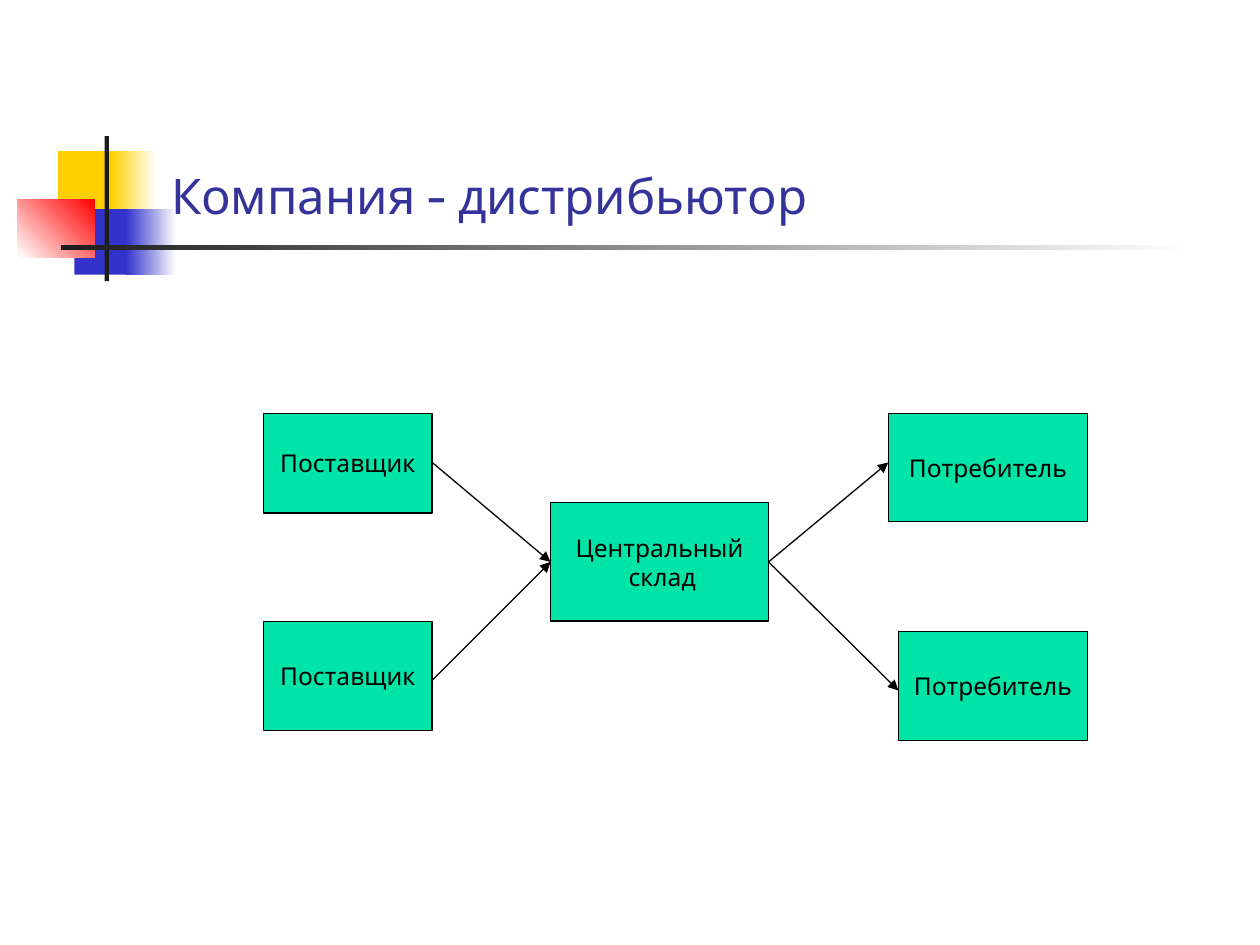
from lxml import etree
from pptx import Presentation
from pptx.dml.color import RGBColor
from pptx.enum import shapes, text
from pptx.oxml import ns
from pptx.util import Pt

WHITE = RGBColor(0xFF, 0xFF, 0xFF)
BLACK = RGBColor(0, 0, 0)
CHARCOAL = RGBColor(0x1C, 0x1C, 0x1C)
YELLOW = RGBColor(0xFF, 0xCF, 0x01)
BLUE = RGBColor(0x33, 0x33, 0xCC)
RED = RGBColor(0xFF, 0, 0)
NAVY = RGBColor(0x33, 0x33, 0x99)
GREEN = RGBColor(0x00, 0xE4, 0xA8)
FONT = "Cabin"


def add_rectangle(page, left, top, width, height):
    shape = page.shapes.add_shape(
        shapes.MSO_SHAPE.RECTANGLE, Pt(left), Pt(top), Pt(width), Pt(height))
    shape.shadow.inherit = False
    return shape


def paint(shape, colors, angle=0):
    if len(colors) == 1:
        shape.fill.solid()
        shape.fill.fore_color.rgb = colors[0]
        return
    shape.fill.gradient()
    shape.fill.gradient_angle = angle
    for stop, color in zip(shape.fill.gradient_stops, colors):
        stop.color.rgb = color


def write(shape, lines, size, color, alignment, frame_format):
    frame = shape.text_frame
    for name, value in frame_format.items():
        setattr(frame, name, value)
    for number, line in enumerate(lines):
        para = frame.add_paragraph() if number else frame.paragraphs[0]
        para.alignment = alignment
        span = para.add_run()
        span.text = line
        for name, value in {"name": FONT, "size": Pt(size)}.items():
            setattr(span.font, name, value)
        span.font.color.rgb = color


def add_ornament(page, left, top):
    parts = [
        (23, 8.6, 34.6, 37.4, [YELLOW], 0),
        (53.3, 8.6, 25.9, 37.4, [YELLOW, WHITE], 0),
        (32.4, 41.7, 33.1, 37.4, [BLUE], 0),
        (61.9, 41.7, 28.8, 37.4, [BLUE, WHITE], 0),
        (0, 36, 43.9, 33.1, [WHITE, RED], 45),
        (49.7, 0, 2.5, 82.8, [CHARCOAL], 0),
        (24.5, 62.4, 648, 2.5, [CHARCOAL, WHITE], 0),
    ]
    for x, y, width, height, colors, angle in parts:
        shape = add_rectangle(page, left + x, top + y, width, height)
        paint(shape, colors, angle)
        shape.line.fill.background()


def add_title(page, left, top, width, height):
    box = page.shapes.add_textbox(Pt(left), Pt(top), Pt(width), Pt(height))
    write(box, ["Компания - дистрибьютор"], 28, NAVY, text.PP_ALIGN.LEFT,
          {"word_wrap": True, "vertical_anchor": text.MSO_ANCHOR.BOTTOM})


def add_arrow(page, start, end):
    arrow = page.shapes.add_connector(
        shapes.MSO_CONNECTOR.STRAIGHT, *(Pt(value) for value in start + end))
    arrow.line.color.rgb = BLACK
    arrow.line.width = Pt(0.75)
    etree.SubElement(arrow.line._get_or_add_ln(), ns.qn("a:tailEnd"), type="triangle")
    etree.SubElement(arrow._element.spPr, ns.qn("a:effectLst"))


def add_supply_diagram(page, left, top):
    nodes = [
        (0, 0, 96.5, 56.9, ["Поставщик"]),
        (0, 118.8, 96.5, 62.6, ["Поставщик"]),
        (164.1, 51.1, 124.6, 67.7, ["Центральный", " склад"]),
        (357.1, 0, 113.8, 61.9, ["Потребитель"]),
        (362.9, 124.5, 108, 62.6, ["Потребитель"]),
    ]
    for x, y, width, height, lines in nodes:
        node = add_rectangle(page, left + x, top + y, width, height)
        paint(node, [GREEN])
        node.line.color.rgb = BLACK
        node.line.width = Pt(0.75)
        write(node, lines, 14, BLACK, text.PP_ALIGN.CENTER,
              {"word_wrap": False, "vertical_anchor": text.MSO_ANCHOR.MIDDLE})

    warehouse_in = (left + 164.1, top + 84.9)
    warehouse_out = (left + 288.7, top + 84.9)
    for y in (152.6, 28.1):
        add_arrow(page, (left + 96.5, top + y), warehouse_in)
    for x, y in ((357.1, 28.1), (362.9, 158.4)):
        add_arrow(page, warehouse_out, (left + x, top + y))


def main():
    deck = Presentation()
    deck.slide_width, deck.slide_height = Pt(720), Pt(540)
    page = deck.slides.add_slide(deck.slide_layouts[6])
    add_ornament(page, 10.1, 77.8)
    add_title(page, 90.7, 16.6, 613.4, 115.2)
    add_supply_diagram(page, 150.5, 236.2)
    deck.save("out.pptx")


if __name__ == "__main__":
    main()
